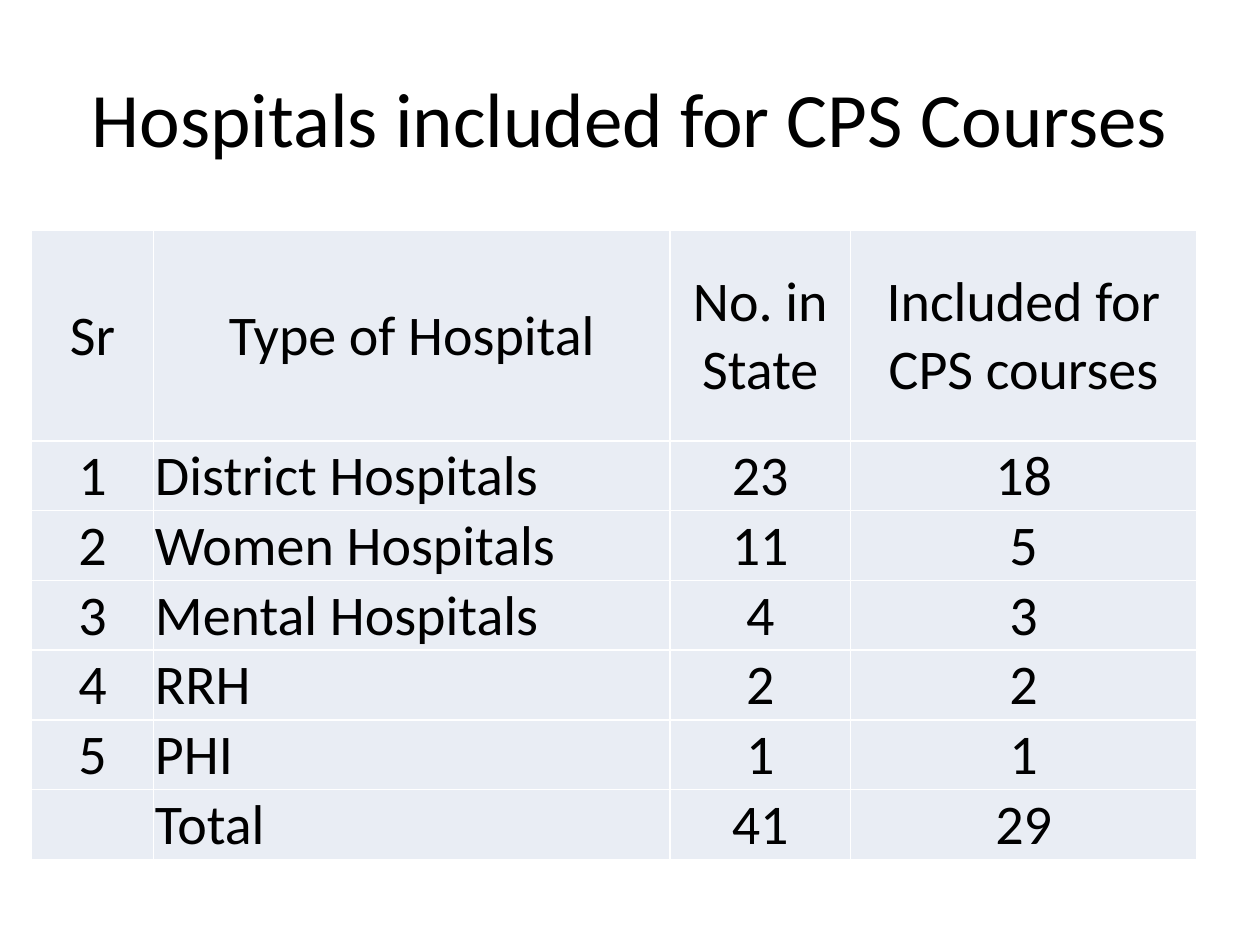
from dataclasses import astuple, dataclass

from lxml.etree import SubElement
from pptx import Presentation
from pptx.dml.color import RGBColor
from pptx.enum.text import MSO_ANCHOR, PP_ALIGN
from pptx.oxml.ns import qn
from pptx.util import Inches, Pt

FONT = "Calibri"
BLACK = "000000"
WHITE = "FFFFFF"
CELL_FILL = "E9EDF4"
COLUMN_WIDTHS = (0.97, 4.1, 1.43, 2.75)
HEADER_HEIGHT = 1.67
ROW_HEIGHT = 0.52
NAME_COLUMN = 1


@dataclass
class HospitalRow:
    serial: str
    hospital_type: str
    in_state: str
    included: str


ROWS = [
    HospitalRow("Sr", "Type of Hospital", "No. in State", "Included for CPS courses"),
    HospitalRow("1", "District Hospitals", "23", "18"),
    HospitalRow("2", "Women Hospitals", "11", "5"),
    HospitalRow("3", "Mental Hospitals", "4", "3"),
    HospitalRow("4", "RRH", "2", "2"),
    HospitalRow("5", "PHI", "1", "1"),
    HospitalRow("", "Total", "41", "29"),
]


def color(value: str) -> RGBColor:
    return RGBColor.from_string(value)


def add_text(p, text: str, size: float, align) -> None:
    p.alignment = align
    r = p.add_run()
    r.text = text
    r.font.name = FONT
    r.font.size = Pt(size)
    r.font.color.rgb = color(BLACK)


def set_borders(cell, value: str, width: float) -> None:
    tc_pr = cell._tc.get_or_add_tcPr()
    for index, side in enumerate(("lnL", "lnR", "lnT", "lnB")):
        ln = SubElement(tc_pr, qn(f"a:{side}"), w=str(Pt(width)))
        SubElement(SubElement(ln, qn("a:solidFill")), qn("a:srgbClr"), val=value)
        tc_pr.insert(index, ln)


def format_cell(cell, text: str, is_header: bool, is_name: bool) -> None:
    cell.margin_left = cell.margin_right = cell.margin_top = Inches(0.01)
    cell.margin_bottom = 0
    cell.vertical_anchor = MSO_ANCHOR.MIDDLE if is_header else MSO_ANCHOR.BOTTOM
    cell.fill.solid()
    cell.fill.fore_color.rgb = color(CELL_FILL)
    set_borders(cell, WHITE, 1)
    if text:
        align = PP_ALIGN.LEFT if is_name and not is_header else PP_ALIGN.CENTER
        add_text(cell.text_frame.paragraphs[0], text, 32, align)


def add_hospital_table(s, rows: list[HospitalRow]) -> None:
    height = HEADER_HEIGHT + ROW_HEIGHT * (len(rows) - 1)
    table = s.shapes.add_table(
        len(rows), len(COLUMN_WIDTHS),
        Inches(0.25), Inches(1.83), Inches(sum(COLUMN_WIDTHS)), Inches(height),
    ).table
    table.first_row = False
    table.horz_banding = False
    for column, width in zip(table.columns, COLUMN_WIDTHS):
        column.width = Inches(width)
    for i, row in enumerate(rows):
        table.rows[i].height = Inches(ROW_HEIGHT if i else HEADER_HEIGHT)
        for j, text in enumerate(astuple(row)):
            format_cell(table.cell(i, j), text, i == 0, j == NAME_COLUMN)


def add_title(s, text: str) -> None:
    sp = s.shapes.title
    sp.left, sp.top = Inches(0.5), Inches(0.3)
    sp.width, sp.height = Inches(9), Inches(1.25)
    tf = sp.text_frame
    tf.vertical_anchor = MSO_ANCHOR.MIDDLE
    add_text(tf.paragraphs[0], text, 44, PP_ALIGN.CENTER)


def main() -> None:
    prs = Presentation()
    prs.slide_width, prs.slide_height = Inches(10), Inches(7.5)
    s = prs.slides.add_slide(prs.slide_layouts[5])
    add_title(s, "Hospitals included for CPS Courses")
    add_hospital_table(s, ROWS)
    prs.save("out.pptx")


if __name__ == "__main__":
    main()
